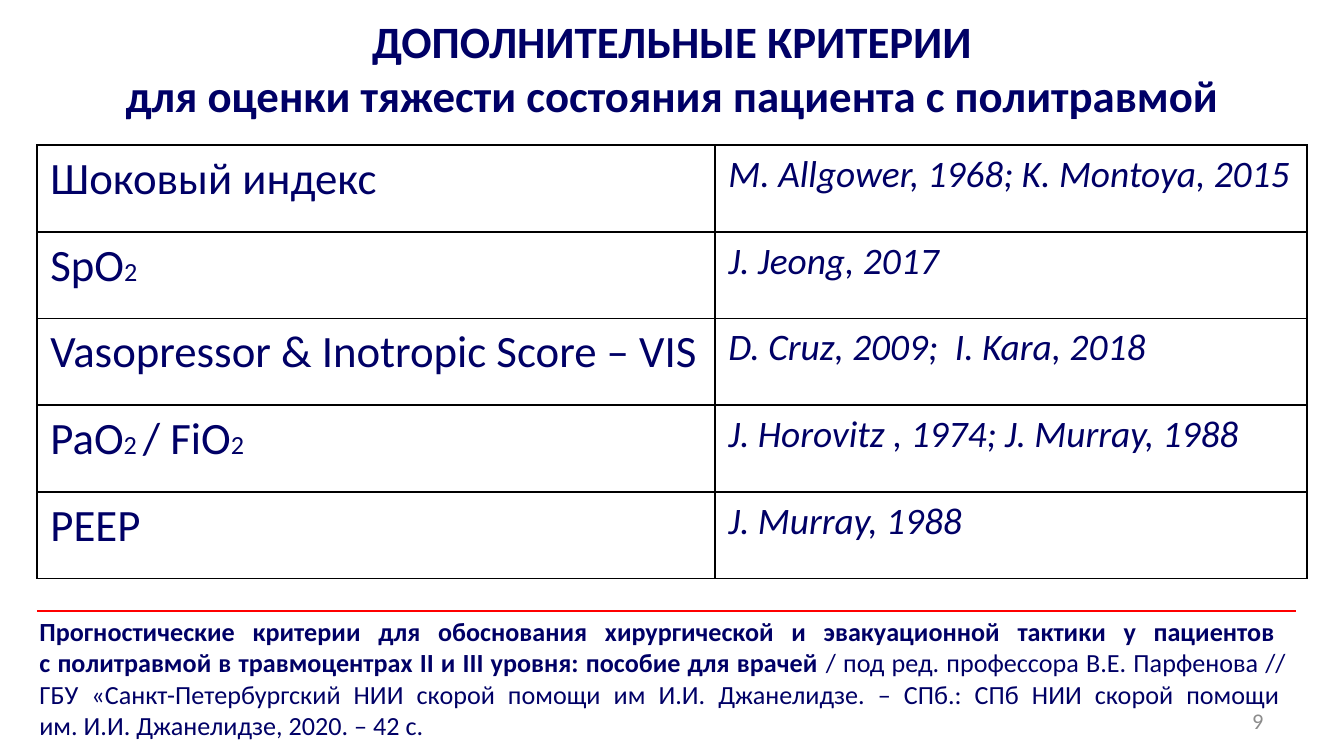
from dataclasses import dataclass

from lxml.etree import SubElement
from pptx import Presentation
from pptx.dml.color import RGBColor
from pptx.enum.shapes import MSO_CONNECTOR as Connector
from pptx.enum.text import MSO_ANCHOR as Anchor, PP_ALIGN as Align
from pptx.oxml import parse_xml
from pptx.oxml.ns import nsdecls, qn
from pptx.util import Emu, Pt

EMU_PER_PX = 4572  # 200 px to the inch
SLIDE_WIDTH, SLIDE_HEIGHT = 2000, 1125


@dataclass(frozen=True)
class Theme:
    font: str = "Calibri"
    ink: str = "000066"
    muted: str = "8C8C8C"
    rule: str = "FF0000"
    border: str = "000000"
    title_size: int = 24
    author_size: int = 20
    note_size: int = 14
    number_size: int = 12
    border_width: float = 1
    rule_width: float = 1.25


THEME = Theme()


@dataclass(frozen=True)
class Piece:
    text: str
    size: int = THEME.title_size
    bold: bool = False
    italic: bool = False
    color: str = THEME.ink


@dataclass(frozen=True)
class Box:
    left: int
    top: int
    width: int
    height: int

    def emu(self) -> list[Emu]:
        return [px(n) for n in (self.left, self.top, self.width, self.height)]


@dataclass(frozen=True)
class Criterion:
    name: tuple[Piece, ...]
    authors: str


def px(length: int) -> Emu:
    return Emu(length * EMU_PER_PX)


def subscript(text: str) -> Piece:
    return Piece(text, THEME.note_size)


CRITERIA = (
    Criterion((Piece("Шоковый индекс"),), "M. Allgower, 1968; K. Montoya, 2015"),
    Criterion((Piece("SpO"), subscript("2")), "J. Jeong, 2017"),
    Criterion((Piece("Vasopressor & Inotropic Score – VIS"),),
              "D. Cruz, 2009;  I. Kara, 2018"),
    Criterion((Piece("PaO"), subscript("2 "), Piece("/ FiO"), subscript("2")),
              "J. Horovitz , 1974; J. Murray, 1988"),
    Criterion((Piece("PEEP"),), "J. Murray, 1988"),
)
COLUMN_WIDTHS = (1009, 881)
ROW_HEIGHT = 129


def write(paragraph, pieces: tuple[Piece, ...], align: Align = Align.LEFT) -> None:
    """Fill a paragraph with formatted runs; a newline is a line break."""
    paragraph.alignment = align
    for piece in pieces:
        for index, line in enumerate(piece.text.split("\n")):
            if index:
                paragraph.add_line_break()
            run = paragraph.add_run()
            run.text = line
            font = run.font
            font.name, font.size = THEME.font, Pt(piece.size)
            font.bold, font.italic = piece.bold, piece.italic
            font.color.rgb = RGBColor.from_string(piece.color)


def add_text(slide, box: Box, pieces: tuple[Piece, ...], align: Align,
             anchor: Anchor = Anchor.TOP, inset: int | None = None) -> None:
    frame = slide.shapes.add_textbox(*box.emu()).text_frame
    frame.word_wrap = True
    frame.vertical_anchor = anchor
    if inset is not None:
        frame.margin_left = frame.margin_right = px(inset)
        frame.margin_top = frame.margin_bottom = px(inset)
    write(frame.paragraphs[0], pieces, align)


def border_cell(cell) -> None:
    properties = cell._tc.get_or_add_tcPr()
    for index, side in enumerate(("lnL", "lnR", "lnT", "lnB")):
        properties.insert(index, parse_xml(
            f'<a:{side} {nsdecls("a")} w="{Pt(THEME.border_width)}"><a:solidFill>'
            f'<a:srgbClr val="{THEME.border}"/></a:solidFill></a:{side}>'))


def add_criteria_table(slide, left: int, top: int) -> None:
    box = Box(left, top, sum(COLUMN_WIDTHS), ROW_HEIGHT * len(CRITERIA))
    table = slide.shapes.add_table(
        len(CRITERIA), len(COLUMN_WIDTHS), *box.emu()).table
    table.first_row = table.horz_banding = False
    for column, width in zip(table.columns, COLUMN_WIDTHS):
        column.width = px(width)
    for row, criterion in zip(table.rows, CRITERIA):
        authors = Piece(criterion.authors, THEME.author_size, italic=True)
        for cell, pieces in zip(row.cells, (criterion.name, (authors,))):
            cell.fill.background()
            border_cell(cell)
            write(cell.text_frame.paragraphs[0], pieces)


def add_rule(slide, left: int, right: int, y: int) -> None:
    line = slide.shapes.add_connector(
        Connector.STRAIGHT, px(left), px(y), px(right), px(y))
    line.line.color.rgb = RGBColor.from_string(THEME.rule)
    line.line.width = Pt(THEME.rule_width)
    SubElement(line._element.spPr, qn("a:effectLst"))


def main() -> None:
    presentation = Presentation()
    presentation.slide_width = px(SLIDE_WIDTH)
    presentation.slide_height = px(SLIDE_HEIGHT)
    slide = presentation.slides.add_slide(presentation.slide_layouts[6])

    # Title
    title = Piece("ДОПОЛНИТЕЛЬНЫЕ КРИТЕРИИ\n"
                  "для оценки тяжести состояния пациента с политравмой", bold=True)
    add_text(slide, Box(100, 12, 1800, 204), (title,), Align.CENTER, inset=8)

    # Criteria and their authors
    add_criteria_table(slide, 55, 216)

    # Reference under the red rule
    add_rule(slide, 55, 1929, 909)
    reference = (
        Piece("Прогностические критерии для обоснования хирургической "
              "и эвакуационной тактики у пациентов \n"
              "с политравмой в травмоцентрах II и III уровня: пособие для врачей",
              THEME.note_size, bold=True),
        Piece(" / под ред. профессора В.Е. Парфенова // \n"
              "ГБУ «Санкт-Петербургский НИИ скорой помощи им И.И. Джанелидзе. "
              "– СПб.: СПб НИИ скорой помощи \n"
              "им. И.И. Джанелидзе, 2020. – 42 с.", THEME.note_size),
    )
    add_text(slide, Box(39, 906, 1906, 208), reference, Align.JUSTIFY)

    # Slide number
    number = Piece("9", THEME.number_size, color=THEME.muted)
    add_text(slide, Box(1433, 1043, 467, 60), (number,), Align.RIGHT, Anchor.MIDDLE)

    presentation.save("out.pptx")


if __name__ == "__main__":
    main()
